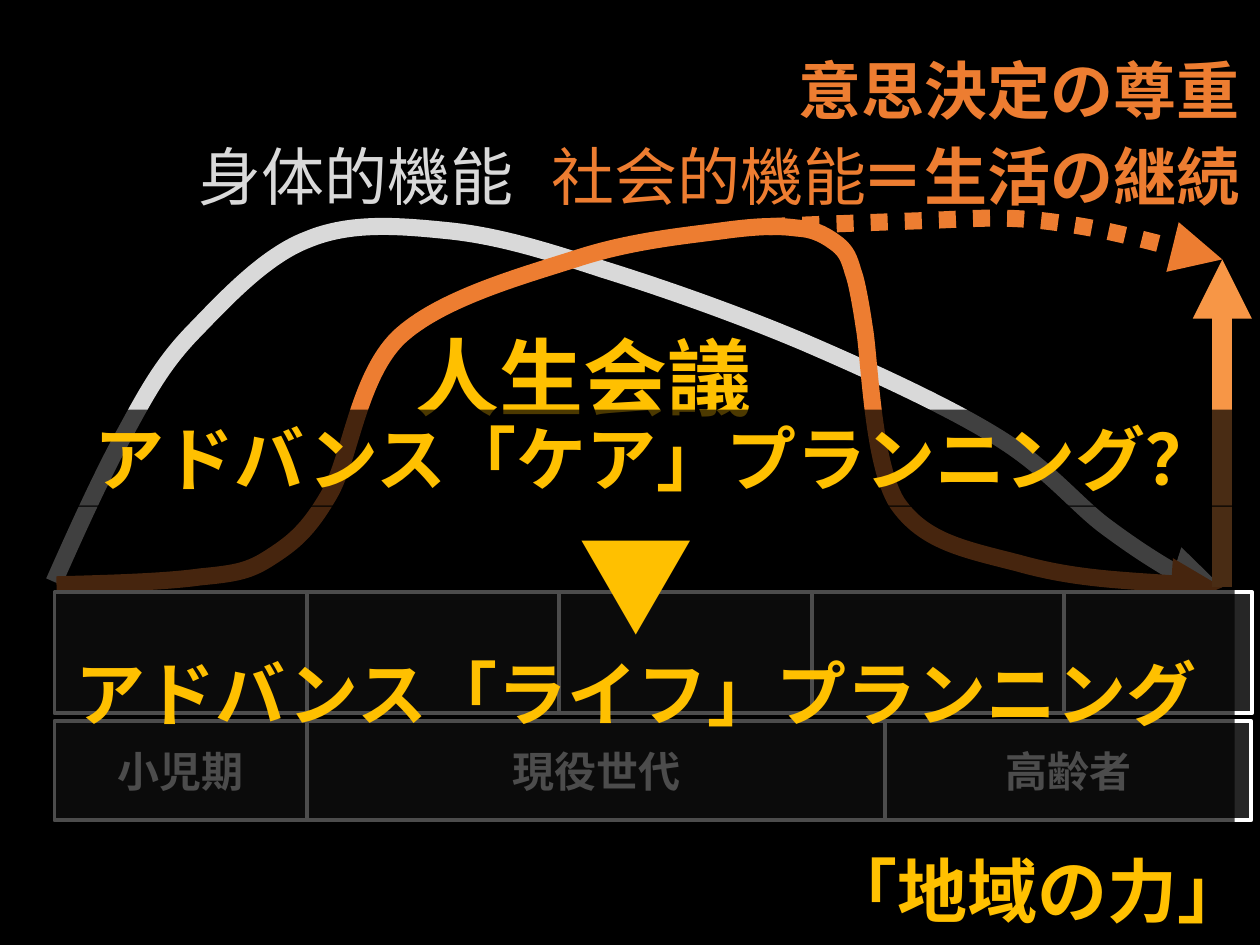
from dataclasses import dataclass

from lxml import etree
from pptx import Presentation
from pptx.dml.color import RGBColor
from pptx.enum.dml import MSO_LINE
from pptx.enum.shapes import MSO_CONNECTOR, MSO_SHAPE
from pptx.enum.text import MSO_ANCHOR, MSO_AUTO_SIZE, PP_ALIGN
from pptx.oxml.ns import qn
from pptx.util import Cm, Pt

RECTANGLE = MSO_SHAPE.RECTANGLE
STRAIGHT = MSO_CONNECTOR.STRAIGHT
DOTTED = MSO_LINE.ROUND_DOT
TOP, MIDDLE = MSO_ANCHOR.TOP, MSO_ANCHOR.MIDDLE
CENTER, RIGHT = PP_ALIGN.CENTER, PP_ALIGN.RIGHT


@dataclass(frozen=True)
class Theme:
    font: str = "Noto Sans CJK JP"
    black: RGBColor = RGBColor(0x00, 0x00, 0x00)
    white: RGBColor = RGBColor(0xFF, 0xFF, 0xFF)
    box: RGBColor = RGBColor(0x26, 0x26, 0x26)
    body: RGBColor = RGBColor(0xD9, 0xD9, 0xD9)
    social: RGBColor = RGBColor(0xED, 0x7D, 0x31)
    lift: RGBColor = RGBColor(0xF7, 0x96, 0x46)
    gold: RGBColor = RGBColor(0xFF, 0xC0, 0x00)
    age_size: int = 24
    label_size: int = 36
    message_size: int = 40
    title_size: int = 48
    mark_size: int = 66


THEME = Theme()


def write(shape, *lines, size, color, bold=True, align=CENTER, anchor=TOP):
    """Write one paragraph per (text, size) pair or plain text."""
    frame = shape.text_frame
    frame.word_wrap = True
    frame.auto_size = MSO_AUTO_SIZE.NONE
    frame.vertical_anchor = anchor
    for index, line in enumerate(lines):
        text, line_size = line if isinstance(line, tuple) else (line, size)
        paragraph = frame.add_paragraph() if index else frame.paragraphs[0]
        paragraph.alignment = align
        run = paragraph.add_run()
        run.text = text
        run.font.size = Pt(line_size)
        run.font.bold = bold
        run.font.color.rgb = color
        run.font.name = THEME.font
        etree.SubElement(run.font._element, qn("a:ea"), typeface=THEME.font)


def style_arrow(shape, color, width, dash=None):
    shape.line.color.rgb = color
    shape.line.width = Pt(width)
    if dash:
        shape.line.dash_style = dash
    properties = shape._element.spPr
    etree.SubElement(properties.find(qn("a:ln")), qn("a:tailEnd"), type="triangle")
    etree.SubElement(properties, qn("a:effectLst"))


presentation = Presentation()
presentation.slide_width, presentation.slide_height = Cm(25.4), Cm(19.05)
slide = presentation.slides.add_slide(presentation.slide_layouts[5])
slide.background.fill.solid()
slide.background.fill.fore_color.rgb = THEME.black

title = slide.shapes.title
title.left, title.top, title.width, title.height = Cm(7.16), Cm(6.43), Cm(9.19), Cm(2.31)
write(title, "人生会議", size=THEME.title_size, color=THEME.gold)

# Bezier curves in tenths of a millimetre: a start, then three points per segment
body_curve = [
    (109, 1173),
    (155, 1069), (201, 968), (246, 884),
    (292, 800), (323, 739), (386, 673),
    (450, 607), (533, 516), (620, 483),
    (706, 447), (803, 455), (902, 465),
    (1003, 475), (1100, 505), (1219, 544),
    (1341, 582), (1491, 635), (1623, 691),
    (1753, 747), (1908, 818), (2007, 879),
    (2108, 940), (2164, 1011), (2223, 1057),
    (2283, 1102), (2327, 1130), (2367, 1153),
    (2408, 1173), (2436, 1179), (2464, 1184),
]
social_curve = [
    (114, 1179),
    (224, 1176), (333, 1173), (404, 1163),
    (478, 1156), (503, 1151), (546, 1123),
    (589, 1095), (620, 1072), (663, 998),
    (706, 927), (721, 762), (803, 681),
    (886, 602), (1054, 556), (1163, 521),
    (1273, 485), (1384, 475), (1458, 465),
    (1532, 455), (1570, 455), (1608, 460),
    (1646, 462), (1669, 478), (1689, 493),
    (1707, 508), (1712, 521), (1720, 549),
    (1730, 574), (1742, 658), (1742, 658),
    (1753, 716), (1758, 932), (1808, 1013),
    (1862, 1092), (1943, 1107), (2052, 1135),
    (2162, 1166), (2311, 1173), (2464, 1184),
]
continued_curve = [
    (1549, 457),
    (1656, 452), (1857, 445), (1857, 445),
    (1951, 442), (2017, 434), (2118, 447),
    (2220, 460), (2342, 493), (2464, 523),
]
for points, color, dash in [
    (body_curve, THEME.body, None),
    (social_curve, THEME.social, None),
    (continued_curve, THEME.social, DOTTED),
]:
    builder = slide.shapes.build_freeform(*points[0], scale=Cm(0.01))
    builder.add_line_segments(points[1:], close=False)
    curve = builder.convert_to_shape()
    curve.fill.background()
    # Turn every three straight segments into one cubic segment
    outline = curve._element.spPr.find(".//" + qn("a:path"))
    segments = outline.findall(qn("a:lnTo"))
    for start in range(0, len(segments), 3):
        cubic = etree.SubElement(outline, qn("a:cubicBezTo"))
        for segment in segments[start:start + 3]:
            cubic.append(segment[0])
            outline.remove(segment)
    style_arrow(curve, color, 9.75, dash)

lift_arrow = slide.shapes.add_connector(STRAIGHT, Cm(24.64), Cm(11.84), Cm(24.64), Cm(5.23))
style_arrow(lift_arrow, THEME.lift, 11.25)

for text, left, top, width, color, bold in [
    ("身体的機能", 3.63, 2.64, 7.11, THEME.body, False),
    ("社会的機能", 10.74, 2.64, 7.11, THEME.social, False),
    ("＝生活の継続", 16.94, 2.64, 8.46, THEME.social, True),
    ("意思決定の尊重", 14.71, 0.91, 11.68, THEME.social, True),
]:
    label = slide.shapes.add_textbox(Cm(left), Cm(top), Cm(width), Cm(1.8))
    write(label, text, size=THEME.label_size, color=color, bold=bold)

strength = slide.shapes.add_textbox(Cm(9.73), Cm(16.97), Cm(15.67), Cm(1.96))
write(strength, "「地域の力」", size=THEME.message_size, color=THEME.gold, align=RIGHT)

age_width = 5.09
for top, height, cells in [
    (11.94, 2.44, [("", age_width)] * 4 + [("", 3.78)]),
    (14.53, 2.01, [("小児期", age_width), ("現役世代", 11.66), ("高齢者", 7.37)]),
]:
    left = 1.1
    for text, width in cells:
        box = slide.shapes.add_shape(RECTANGLE, Cm(left), Cm(top), Cm(width), Cm(height))
        box.shadow.inherit = False
        box.fill.solid()
        box.fill.fore_color.rgb = THEME.box
        box.line.color.rgb = THEME.white
        box.line.width = Pt(2.25)
        if text:
            write(box, text, size=THEME.age_size, color=THEME.white, anchor=MIDDLE)
        left += width

for left, top, width, height, lines in [
    (1.22, 8.26, 23.98, 1.96, ["アドバンス「ケア」プランニング？"]),
    (0.76, 10.19, 24.13, 6.5, [("▼", THEME.mark_size), "アドバンス「ライフ」プランニング"]),
]:
    veil = slide.shapes.add_shape(RECTANGLE, Cm(left), Cm(top), Cm(width), Cm(height))
    veil.shadow.inherit = False
    veil.fill.solid()
    veil.fill.fore_color.rgb = THEME.black
    veil.line.fill.background()
    veil_color = veil._element.spPr.find(qn("a:solidFill"))[0]
    etree.SubElement(veil_color, qn("a:alpha"), val="70000")
    write(veil, *lines, size=THEME.message_size, color=THEME.gold)

presentation.save("out.pptx")
